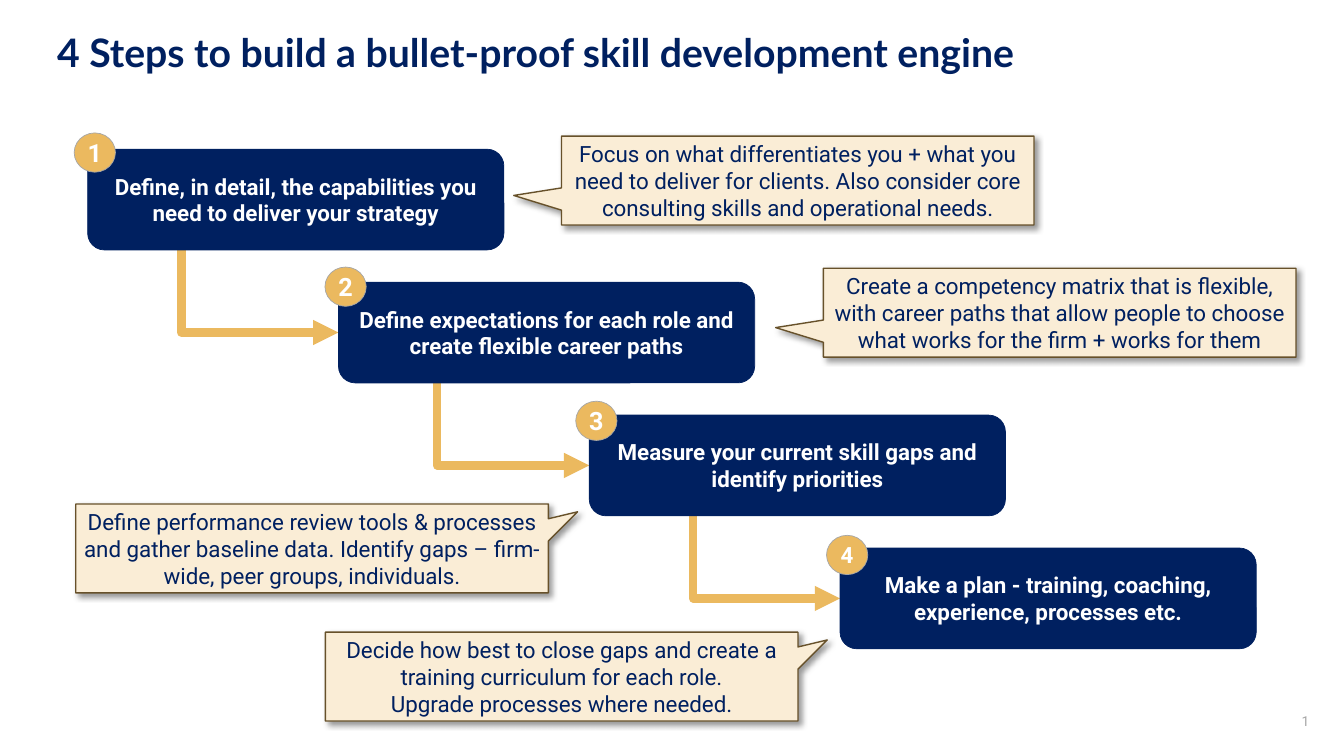
from lxml.etree import SubElement
from pptx import Presentation
from pptx.dml.color import RGBColor
from pptx.enum.shapes import MSO_CONNECTOR, MSO_SHAPE
from pptx.enum.text import MSO_ANCHOR, PP_ALIGN
from pptx.oxml.ns import qn
from pptx.util import Cm, Pt

TITLE = "4 Steps to build a bullet-proof skill development engine"
PAGE_NUMBER = "1"
STEPS = [
    "Define, in detail, the capabilities you need to deliver your strategy",
    "Define expectations for each role and create flexible career paths",
    "Measure your current skill gaps and identify priorities",
    "Make a plan - training, coaching, experience, processes etc.",
]
POINT_LEFT = (-0.601, 0.168)
POINT_RIGHT = (0.562, -0.412)
# text, left, top, pointer
CALLOUTS = [
    ("Focus on what differentiates you + what you need to deliver for clients. "
     "Also consider core consulting skills and operational needs.",
     14.15, 3.43, POINT_LEFT),
    ("Create a competency matrix that is flexible, with career paths that allow "
     "people to choose what works for the firm + works for them",
     20.75, 6.76, POINT_LEFT),
    ("Define performance review tools & processes and gather baseline data. "
     "Identify gaps – firm-wide, peer groups, individuals.",
     1.91, 12.7, POINT_RIGHT),
    ("Decide how best to close gaps and create a training curriculum for each role.\n"
     "Upgrade processes where needed.",
     8.2, 15.93, POINT_RIGHT),
]
COLORS = {
    "navy": "002060",
    "gold": "EBB95F",
    "cream": "FAEDD6",
    "brown": "67512A",
    "gray": "A6A6A6",
    "white": "FFFFFF",
    "black": "000000",
}

# Lengths in centimetres
STEP_LEFT, STEP_TOP = 2.21, 3.76
STEP_RIGHTWARD, STEP_DOWNWARD = 6.32, 3.35
STEP_WIDTH, STEP_HEIGHT = 10.49, 2.54
BADGE_TOP, BADGE_DOWNWARD = 3.35, 3.38
BADGE_WIDTH, BADGE_HEIGHT = 1.04, 0.99
ARROW_LEFT, ARROW_RIGHTWARD = 4.57, 6.45
CALLOUT_WIDTH, CALLOUT_HEIGHT = 11.91, 2.24


def color(name):
    return RGBColor.from_string(COLORS[name])


def write(shape, text, size=16, font="Roboto", fill="navy", bold=False,
          align=PP_ALIGN.CENTER, inset=0.2, spacing=1.0):
    frame = shape.text_frame
    frame.word_wrap = True
    frame.vertical_anchor = MSO_ANCHOR.MIDDLE
    frame.margin_left = frame.margin_right = Cm(inset)
    frame.margin_top = frame.margin_bottom = Cm(inset / 2)
    paragraph = frame.paragraphs[0]
    paragraph.text = text
    paragraph.alignment = align
    paragraph.line_spacing = spacing
    for run in paragraph.runs:
        run.font.name = font
        run.font.size = Pt(size)
        run.font.bold = bold
        run.font.color.rgb = color(fill)


def add_box(slide, kind, left, top, width, height, fill, line, line_width=0.5):
    shape = slide.shapes.add_shape(kind, Cm(left), Cm(top), Cm(width), Cm(height))
    shape.shadow.inherit = False
    shape.fill.solid()
    shape.fill.fore_color.rgb = color(fill)
    shape.line.color.rgb = color(line)
    shape.line.width = Pt(line_width)
    return shape


def add_text(slide, text, left, top, width, height, **text_format):
    box = slide.shapes.add_textbox(Cm(left), Cm(top), Cm(width), Cm(height))
    write(box, text, **text_format)


def add_elbow_arrow(slide, start_x, start_y, end_x, end_y):
    """Go down, then right: a two-part elbow, mirrored and turned by 270 degrees."""
    across, down = end_x - start_x, end_y - start_y
    left = (start_x + end_x - down) / 2
    top = (start_y + end_y - across) / 2
    arrow = slide.shapes.add_connector(
        MSO_CONNECTOR.ELBOW, Cm(left), Cm(top), Cm(left + down), Cm(top + across))
    arrow.line.color.rgb = color("gold")
    arrow.line.width = Pt(6)
    properties = arrow._element.spPr
    properties.find(qn("a:prstGeom")).set("prst", "bentConnector2")
    transform = properties.find(qn("a:xfrm"))
    transform.set("rot", str(270 * 60000))
    transform.set("flipH", "1")
    SubElement(properties.find(qn("a:ln")), qn("a:tailEnd"), type="triangle")
    SubElement(properties, qn("a:effectLst"))


def add_shadow(shape):
    effects = shape._element.spPr.find(qn("a:effectLst"))
    shadow = SubElement(effects, qn("a:outerShdw"), blurRad=str(Pt(4)),
                        dist=str(Pt(3)), dir=str(45 * 60000),
                        algn="tl", rotWithShape="0")
    shade = SubElement(shadow, qn("a:srgbClr"), val=COLORS["black"])
    SubElement(shade, qn("a:alpha"), val="40000")


def add_step(slide, index, text):
    left = STEP_LEFT + index * STEP_RIGHTWARD
    top = STEP_TOP + index * STEP_DOWNWARD
    box = add_box(slide, MSO_SHAPE.ROUNDED_RECTANGLE, left, top,
                  STEP_WIDTH, STEP_HEIGHT, "navy", "navy")
    write(box, text, fill="white", bold=True)
    badge = add_box(slide, MSO_SHAPE.OVAL, left - 0.34,
                    BADGE_TOP + index * BADGE_DOWNWARD,
                    BADGE_WIDTH, BADGE_HEIGHT, "gold", "gray")
    number_size = 16 if index == len(STEPS) - 1 else 18
    write(badge, str(index + 1), size=number_size, fill="white", bold=True, inset=0)


def add_callout(slide, text, left, top, pointer):
    callout = add_box(slide, MSO_SHAPE.RECTANGULAR_CALLOUT, left, top,
                      CALLOUT_WIDTH, CALLOUT_HEIGHT, "cream", "brown", 1)
    callout.adjustments[0], callout.adjustments[1] = pointer
    add_shadow(callout)
    write(callout, text)


def main():
    presentation = Presentation()
    presentation.slide_width, presentation.slide_height = Cm(33.87), Cm(19.05)
    slide = presentation.slides.add_slide(presentation.slide_layouts[6])

    add_text(slide, TITLE, 1.19, 0.64, 31.47, 1.47, size=28, font="Lato",
             bold=True, align=PP_ALIGN.LEFT, inset=0.25, spacing=0.9)
    for index in range(len(STEPS) - 1):
        step_bottom = STEP_TOP + index * STEP_DOWNWARD + STEP_HEIGHT
        next_left = STEP_LEFT + (index + 1) * STEP_RIGHTWARD
        next_middle = STEP_TOP + (index + 1) * STEP_DOWNWARD + STEP_HEIGHT / 2
        add_elbow_arrow(slide, ARROW_LEFT + index * ARROW_RIGHTWARD,
                        step_bottom - 0.05, next_left, next_middle)
    for index, text in enumerate(STEPS):
        add_step(slide, index, text)
    for callout in CALLOUTS:
        add_callout(slide, *callout)
    add_text(slide, PAGE_NUMBER, 27.05, 17.65, 6.2, 1.02, size=9.8, fill="gray",
             align=PP_ALIGN.RIGHT, inset=0.25)

    presentation.save("out.pptx")


if __name__ == "__main__":
    main()
